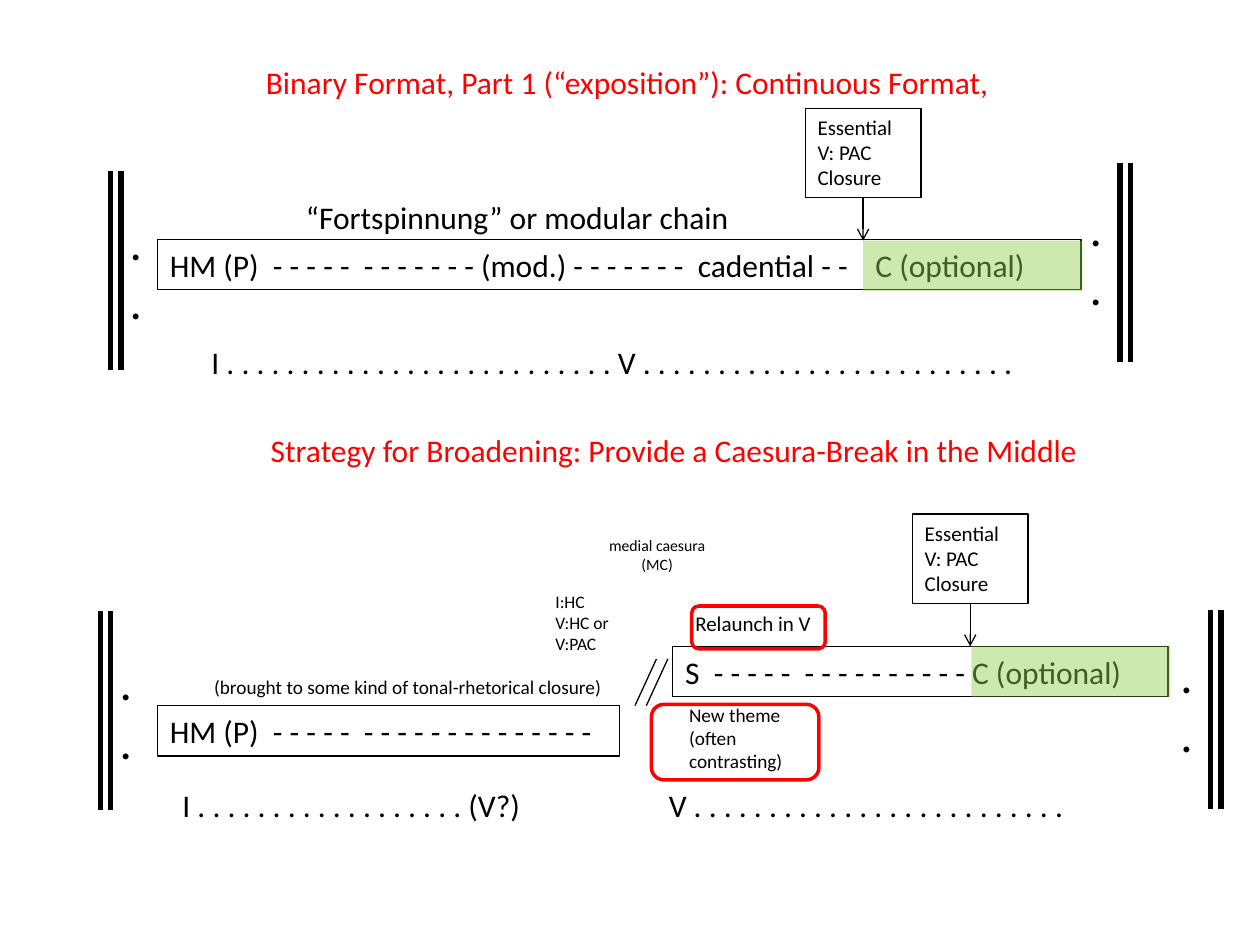
from dataclasses import dataclass

from lxml.etree import SubElement
from pptx import Presentation
from pptx.dml.color import RGBColor as RGB
from pptx.enum.shapes import MSO_CONNECTOR as LINK, MSO_SHAPE as SHAPE
from pptx.enum.text import MSO_ANCHOR as ANCHOR, MSO_AUTO_SIZE as FIT, PP_ALIGN as ALIGN
from pptx.oxml.ns import qn
from pptx.util import Pt

PX = 9144  # EMU; 100 px to the inch


@dataclass(frozen=True)
class Theme:
    font: str = "Calibri"
    ink: RGB = RGB(0x00, 0x00, 0x00)
    red: RGB = RGB(0xFF, 0x00, 0x00)
    green: RGB = RGB(0x92, 0xD0, 0x50)
    alpha: int = 45
    head: int = 18
    label: int = 12
    note: int = 11
    chord: int = 10
    small: int = 9
    dot: int = 28
    thin: float = 0.75
    ring: float = 2
    bar: float = 3


T = Theme()


def px(*nums):
    return [num * PX for num in nums]


def write(shape, text, size, color=T.ink, align=ALIGN.LEFT):
    frame = shape.text_frame
    frame.text = text
    frame.word_wrap = True
    frame.auto_size = FIT.NONE
    frame.vertical_anchor = ANCHOR.TOP
    for para in frame.paragraphs:
        para.alignment = align
        for run in para.runs:
            run.font.name = T.font
            run.font.size = Pt(size)
            run.font.color.rgb = color


def label(slide, area, text, size=T.head, color=T.ink, align=ALIGN.LEFT):
    write(slide.shapes.add_textbox(*px(*area)), text, size, color, align)


def outline(slide, area, kind=SHAPE.RECTANGLE, color=T.ink, width=T.thin):
    shape = slide.shapes.add_shape(kind, *px(*area))
    shape.shadow.inherit = False
    shape.fill.background()
    shape.line.color.rgb = color
    shape.line.width = Pt(width)
    return shape


def box(slide, area, text, size=T.head):
    write(outline(slide, area), text, size)


def ring(slide, area):
    outline(slide, area, SHAPE.ROUNDED_RECTANGLE, T.red, T.ring)


def shade(slide, area):
    """Lay a see-through green band over a box."""
    shape = slide.shapes.add_shape(SHAPE.RECTANGLE, *px(*area))
    shape.shadow.inherit = False
    shape.line.fill.background()
    shape.fill.solid()
    shape.fill.fore_color.rgb = T.green
    tint = shape.fill._xPr.find(".//" + qn("a:srgbClr"))
    SubElement(tint, qn("a:alpha")).set("val", str(T.alpha * 1000))


def line(slide, ends, width=T.thin, arrow=False):
    link = slide.shapes.add_connector(LINK.STRAIGHT, *px(*ends))
    link.line.color.rgb = T.ink
    link.line.width = Pt(width)
    if arrow:
        SubElement(link.line._get_or_add_ln(), qn("a:tailEnd")).set("type", "arrow")
    SubElement(link._element.spPr, qn("a:effectLst"))


def repeat(slide, x, y, opens):
    """Draw a repeat sign: two bars, with dots on the inner side."""
    for left in (x, x + 8):
        line(slide, (left, y, left, y + 158), T.bar)
    dx, dy = (5, 27) if opens else (-34, 23)
    label(slide, (x + dx, y + dy, 42, 104), ".\n.", T.dot)


def closure(slide, x, y):
    box(slide, (x, y, 92, 71), "Essential\nV: PAC Closure", T.label)
    line(slide, (x + 46, y + 71, x + 46, y + 105), arrow=True)


def heading(slide, area, text):
    title = slide.shapes.title
    title.left, title.top, title.width, title.height = px(*area)
    write(title, text, T.head, T.red)


def continuous(slide):
    heading(slide, (201, 45, 606, 40),
            "Binary Format, Part 1 (“exposition”): Continuous Format,")
    label(slide, (233, 152, 367, 40), "“Fortspinnung” or modular chain")
    box(slide, (125, 190, 733, 40),
        "HM (P)  - - - - -  - - - - - - - (mod.) - - - - - - -  cadential - -")
    label(slide, (685, 190, 173, 40), "C (optional)")
    shade(slide, (685, 191, 174, 40))
    closure(slide, 639, 86)
    label(slide, (158, 267, 692, 40),
          "I . . . . . . . . . . . . . . . . . . . . . . . . . . V"
          " . . . . . . . . . . . . . . . . . . . . . . . . .")
    repeat(slide, 88, 136, True)
    repeat(slide, 889, 129, False)


def broadened(slide):
    label(slide, (205, 337, 700, 40),
          "Strategy for Broadening: Provide a Caesura-Break in the Middle", color=T.red)
    box(slide, (125, 560, 367, 40), "HM (P)  - - - - -  - - - - - - - - - - - - - -")
    box(slide, (534, 513, 393, 40), "S  - - - - -  - - - - - - - - - - C (optional)")
    shade(slide, (771, 513, 158, 40))
    closure(slide, 724, 408)
    for x in (521, 530):
        line(slide, (x, 523, x - 17, 560))
    label(slide, (471, 420, 101, 40), "medial caesura\n(MC)", T.small, align=ALIGN.CENTER)
    label(slide, (431, 464, 74, 61), "I:HC\nV:HC or\nV:PAC", T.chord)
    label(slide, (160, 531, 332, 29),
          "(brought to some kind of tonal-rhetorical closure)", T.note)
    label(slide, (542, 480, 117, 30), "Relaunch in V", T.label)
    ring(slide, (549, 481, 106, 34))
    label(slide, (537, 553, 109, 66), "New theme\n(often contrasting)", T.note)
    ring(slide, (517, 559, 133, 60))
    label(slide, (135, 619, 380, 40), "I . . . . . . . . . . . . . . . . . . (V?)")
    label(slide, (521, 619, 410, 40),
          "V . . . . . . . . . . . . . . . . . . . . . . . . .")
    repeat(slide, 80, 485, True)
    repeat(slide, 961, 484, False)


def main():
    deck = Presentation()
    deck.slide_width, deck.slide_height = px(1000, 750)
    slide = deck.slides.add_slide(deck.slide_layouts.get_by_name("Title Only"))
    continuous(slide)
    broadened(slide)
    deck.save("out.pptx")


if __name__ == "__main__":
    main()
